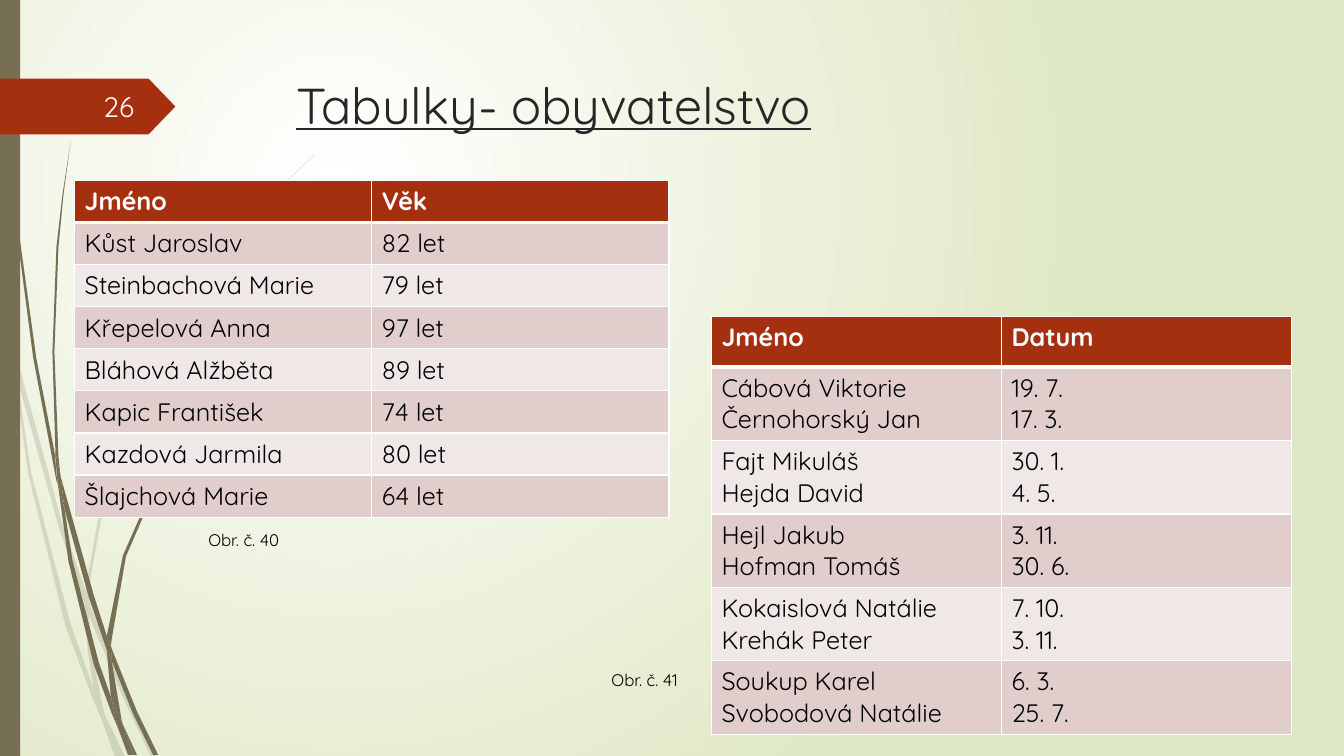
from lxml.etree import SubElement
from pptx import Presentation
from pptx.dml.color import RGBColor
from pptx.enum.shapes import MSO_SHAPE
from pptx.enum.text import MSO_ANCHOR, PP_ALIGN
from pptx.oxml import parse_xml
from pptx.oxml.ns import nsdecls, qn
from pptx.util import Cm, Pt

FONT = "Quicksand"
RUST, OLIVE, WHITE, BLACK = "A53010", "766F54", "FFFFFF", "000000"
BANDS = ("E1CDCC", "F0E8E7")
UNIT = Cm(2.54) / 100
PALE = [
    [(11, 350), (9, 322), (0, 282), (0, 299), (10, 344)],
    [(58, 522), (84, 599), (85, 586), (62, 520), (14, 345), (17, 376)],
    [(92, 607), (88, 596), (88, 610), (123, 694), (150, 751), (155, 751),
     (127, 692)],
    [(119, 751), (124, 751), (105, 711)],
    [(93, 683), (70, 619), (31, 469), (17, 376), (11, 350), (28, 470),
     (65, 621), (92, 693), (101, 714), (99, 707)],
    [(84, 599), (87, 646), (93, 683), (96, 692), (105, 711), (103, 706),
     (91, 646), (88, 610), (88, 608)],
    [(88, 584), (110, 462), (160, 349), (229, 245), (268, 198), (290, 175),
     (312, 154), (312, 153), (289, 175), (268, 197), (228, 244), (158, 348),
     (107, 461), (85, 584), (85, 586), (88, 596)],
    [(101, 714), (114, 751), (119, 751)],
    [(88, 608), (88, 610), (88, 596), (85, 586), (84, 599)],
    [(96, 692), (93, 683), (99, 707), (101, 714), (119, 751), (105, 711)],
]
DARK = [
    [(7, 110), (17, 233), (33, 355), (56, 477), (57, 481), (55, 457),
     (55, 453), (36, 355), (19, 232), (8, 109), (5, 48), (4, 0), (3, 0),
     (4, 48)],
    [(88, 592), (106, 645), (106, 631), (93, 590), (60, 472), (64, 505)],
    [(113, 649), (110, 641), (111, 656), (132, 708), (152, 749), (157, 749),
     (136, 706)],
    [(110, 691), (98, 657), (72, 556), (64, 505), (57, 477), (68, 557),
     (93, 659), (111, 708), (117, 722), (116, 717)],
    [(60, 472), (58, 453), (54, 349), (58, 245), (63, 193), (70, 141),
     (62, 193), (56, 245), (52, 349), (55, 449)],
    [(133, 749), (136, 749), (122, 719)],
    [(57, 477), (64, 505), (60, 472), (55, 449), (55, 453)],
    [(111, 633), (125, 552), (158, 476), (205, 406), (231, 374), (245, 359),
     (261, 344), (260, 344), (245, 358), (231, 373), (204, 405), (156, 474),
     (122, 551), (106, 631), (110, 641)],
    [(117, 722), (127, 749), (131, 749)],
    [(106, 645), (110, 691), (116, 706), (122, 719), (121, 716), (111, 656),
     (109, 651)],
    [(106, 645), (109, 651), (111, 656), (110, 641), (106, 631)],
    [(116, 706), (110, 691), (116, 717), (117, 722), (130, 749), (133, 749),
     (122, 719)],
]
AGES = [
    ("Jméno", "Věk"),
    ("Kůst Jaroslav", "82 let"),
    ("Steinbachová Marie", "79 let"),
    ("Křepelová Anna", "97 let"),
    ("Bláhová Alžběta", "89 let"),
    ("Kapic František", "74 let"),
    ("Kazdová Jarmila", "80 let"),
    ("Šlajchová Marie", "64 let"),
]
DATES = [
    ("Jméno", "Datum"),
    ("Cábová Viktorie\nČernohorský Jan", "19. 7.\n17. 3."),
    ("Fajt Mikuláš\nHejda David", "30. 1.\n4. 5."),
    ("Hejl Jakub\nHofman Tomáš", "3. 11.\n30. 6."),
    ("Kokaislová Natálie\nKrehák Peter", "7. 10.\n3. 11."),
    ("Soukup Karel\nSvobodová Natálie", "6. 3.\n25. 7."),
]


def paint(fill, tone):
    """Fill solidly with a hex colour."""
    fill.solid()
    fill.fore_color.rgb = RGBColor.from_string(tone)


def write(frame, text, size, tone, bold=False, line=False, align=PP_ALIGN.LEFT):
    """Put styled text into a text frame, one paragraph per line."""
    frame.text = text
    for para in frame.paragraphs:
        para.alignment = align
        font = para.font
        font.name, font.size = FONT, Pt(size)
        font.bold, font.underline = bold, line
        font.color.rgb = RGBColor.from_string(tone)


def label(slide, box, text, size, tone, align=PP_ALIGN.LEFT):
    """Add a wrapped text box."""
    frame = slide.shapes.add_textbox(*map(Cm, box)).text_frame
    frame.word_wrap = True
    write(frame, text, size, tone, align=align)
    return frame


def finish(shape, tone):
    """Give a shape a plain fill with no line or shadow."""
    paint(shape.fill, tone)
    shape.line.fill.background()
    shape.shadow.inherit = False


def block(slide, kind, box, tone):
    """Add a plain preset shape."""
    shape = slide.shapes.add_shape(kind, *map(Cm, box))
    finish(shape, tone)
    return shape


def grass(slide, blades, alpha=None):
    """Draw a group of grass blades, see-through if alpha is given."""
    group = slide.shapes.add_group_shape()
    for first, *rest in blades:
        build = group.shapes.build_freeform(*first, scale=UNIT)
        build.add_line_segments(rest)
        shape = build.convert_to_shape()
        finish(shape, OLIVE)
        if alpha:
            tone = shape.fill._xPr.find(".//" + qn("a:srgbClr"))
            SubElement(tone, qn("a:alpha"), val=str(alpha * 1000))


def border(cell, head):
    """Draw white cell edges, thick under the header."""
    props = cell._tc.get_or_add_tcPr()
    for i, side in enumerate("LRTB"):
        width = Pt(3 if head and side == "B" else 1)
        props.insert(i, parse_xml(
            f'<a:ln{side} {nsdecls("a")} w="{width}"><a:solidFill>'
            f'<a:srgbClr val="{WHITE}"/></a:solidFill></a:ln{side}>'))


def grid(slide, left, top, wide, head, step, data):
    """Add a banded table with two equal columns."""
    high = head + step * (len(data) - 1)
    table = slide.shapes.add_table(
        len(data), 2, Cm(left), Cm(top), Cm(wide), Cm(high)).table
    for i, texts in enumerate(data):
        table.rows[i].height = Cm(step if i else head)
        for j, text in enumerate(texts):
            cell = table.cell(i, j)
            write(cell.text_frame, text, 18, BLACK if i else WHITE, bold=not i)
            paint(cell.fill, BANDS[(i - 1) % 2] if i else RUST)
            border(cell, not i)


def glow(slide):
    """Set the radial background."""
    fill = slide.background.fill
    fill.gradient()
    for stop, tone in zip(fill.gradient_stops, (WHITE, "DFE8C4")):
        stop.color.rgb = RGBColor.from_string(tone)
    line = slide._element.find(".//" + qn("a:lin"))
    line.getparent().replace(line, parse_xml(
        f'<a:path {nsdecls("a")} path="circle"><a:fillToRect l="50000" '
        't="50000" r="100000" b="100000"/></a:path>'))


def main():
    """Build and save the slide."""
    deck = Presentation()
    deck.slide_width, deck.slide_height = Cm(33.87), Cm(19.05)
    slide = deck.slides.add_slide(deck.slide_layouts[5])
    glow(slide)
    grass(slide, PALE, 20)
    grass(slide, DARK)
    block(slide, MSO_SHAPE.RECTANGLE, (0, 0, 0.51, 19.05), OLIVE)
    arrow = block(slide, MSO_SHAPE.PENTAGON, (0, 1.98, 4.42, 1.41), RUST)
    arrow.adjustments[0] = 0.48
    title = slide.shapes.title
    title.left, title.top, title.width, title.height = map(Cm, (7.21, 1.73, 24.77, 3.56))
    title.text_frame.vertical_anchor = MSO_ANCHOR.TOP
    write(title.text_frame, "Tabulky- obyvatelstvo", 36, "262626", line=True)
    page = label(slide, (1.47, 2.18, 2.16, 1.02), "26", 20, "FEFFFF", PP_ALIGN.RIGHT)
    page.vertical_anchor = MSO_ANCHOR.MIDDLE
    grid(slide, 1.88, 4.55, 14.98, 1.06, 1.06, AGES)
    grid(slide, 17.93, 7.98, 14.62, 1.27, 1.85, DATES)
    label(slide, (5, 13.23, 5.72, 0.76), "Obr. č. 40", 12, BLACK)
    label(slide, (15.16, 16.74, 3.71, 0.76), "Obr. č. 41", 12, BLACK)
    deck.save("out.pptx")


if __name__ == "__main__":
    main()
